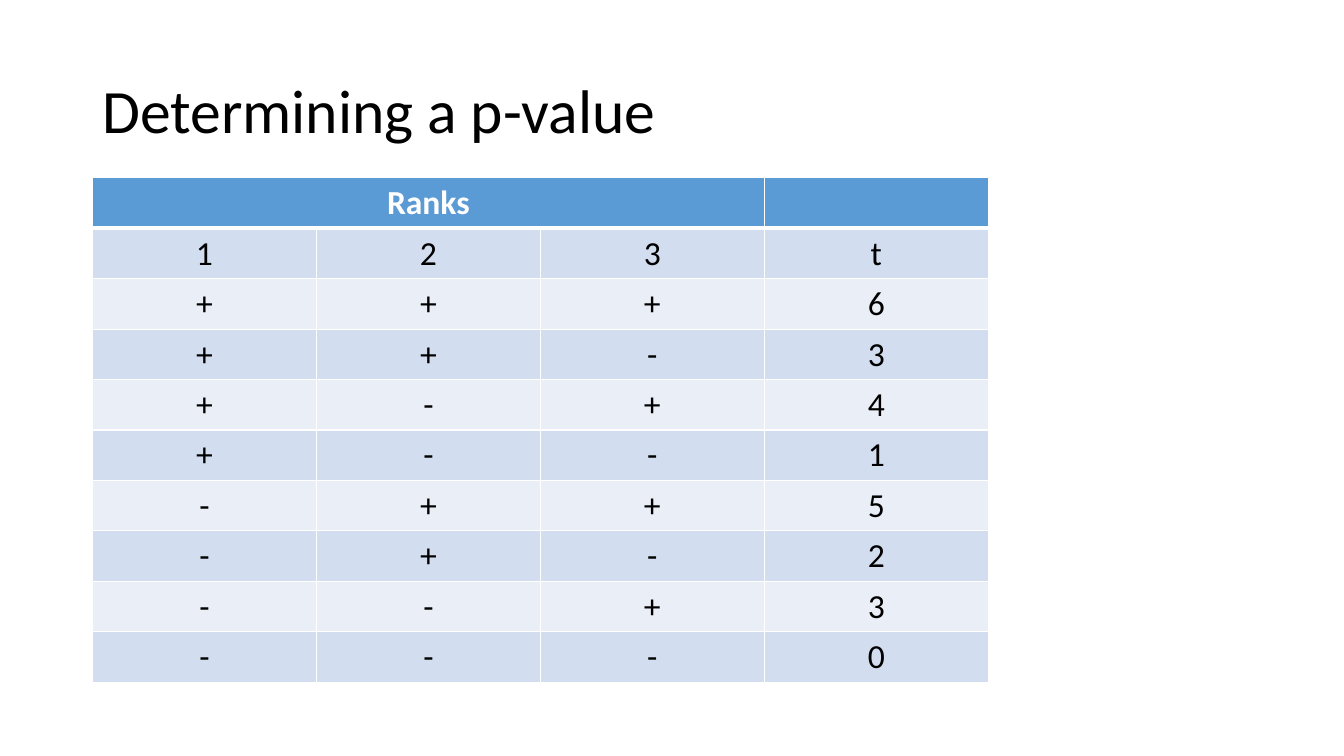
from itertools import product

from pptx import Presentation
from pptx import util as u
from pptx.dml.color import RGBColor
from pptx.enum import text
from pptx.oxml import parse_xml
from pptx.oxml.ns import nsdecls

FONT = "Calibri"
BLACK, WHITE = "000000", "FFFFFF"
HEADER_FILL = "5B9BD5"
BAND_FILLS = ("D2DEEF", "EAEFF7")
RANKS = (1, 2, 3)
LEFT = u.Cm(2.33)


def color(value):
    return RGBColor.from_string(value)


def add_run(paragraph, content, size, font_color, bold=False):
    run = paragraph.add_run()
    run.text = content
    font = run.font
    font.name, font.size, font.bold = FONT, u.Pt(size), bold
    font.color.rgb = color(font_color)


def add_title(slide, content):
    shape = slide.shapes.add_textbox(LEFT, u.Cm(1.01), u.Cm(29.21), u.Cm(3.68))
    frame = shape.text_frame
    frame.word_wrap = True
    frame.vertical_anchor = text.MSO_ANCHOR.MIDDLE
    paragraph = frame.paragraphs[0]
    paragraph.line_spacing = 0.9
    add_run(paragraph, content, 44, BLACK)


def set_borders(cell, top=1, bottom=1):
    """Draw white borders, with widths in points."""
    properties = cell._tc.get_or_add_tcPr()
    widths = {"lnL": 1, "lnR": 1, "lnT": top, "lnB": bottom}
    for index, (side, width) in enumerate(widths.items()):
        # Borders come before the fill in the cell properties
        properties.insert(index, parse_xml(
            f'<a:{side} {nsdecls("a")} w="{u.Pt(width)}"><a:solidFill>'
            f'<a:srgbClr val="{WHITE}"/></a:solidFill></a:{side}>'))


def fill_cell(cell, content, row):
    header = row == 0
    cell.fill.solid()
    cell.fill.fore_color.rgb = color(
        HEADER_FILL if header else BAND_FILLS[(row - 1) % 2])
    set_borders(cell, top=3 if row == 1 else 1, bottom=3 if header else 1)
    if content:
        paragraph = cell.text_frame.paragraphs[0]
        paragraph.alignment = text.PP_ALIGN.CENTER
        add_run(paragraph, content, 24, WHITE if header else BLACK, bold=header)


def rank_rows():
    """List every sign pattern with t, the sum of the positive ranks."""
    rows = [("Ranks", "", "", ""), (*map(str, RANKS), "t")]
    for signs in product("+-", repeat=len(RANKS)):
        t = sum(rank for rank, sign in zip(RANKS, signs) if sign == "+")
        rows.append((*signs, str(t)))
    return rows


def add_rank_table(slide, rows):
    columns = len(rows[0])
    table = slide.shapes.add_table(
        len(rows), columns, LEFT, u.Cm(4.48),
        u.Cm(5.645 * columns), u.Cm(1.27 * len(rows))).table
    for row, values in enumerate(rows):
        for column, value in enumerate(values):
            fill_cell(table.cell(row, column), value, row)
    table.cell(0, 0).merge(table.cell(0, len(RANKS) - 1))


def main():
    presentation = Presentation()
    presentation.slide_width = u.Cm(33.87)
    presentation.slide_height = u.Cm(19.05)
    slide = presentation.slides.add_slide(presentation.slide_layouts[6])

    # Title
    add_title(slide, "Determining a p-value")

    # Sign patterns and their rank sums
    add_rank_table(slide, rank_rows())

    presentation.save("out.pptx")


if __name__ == "__main__":
    main()
